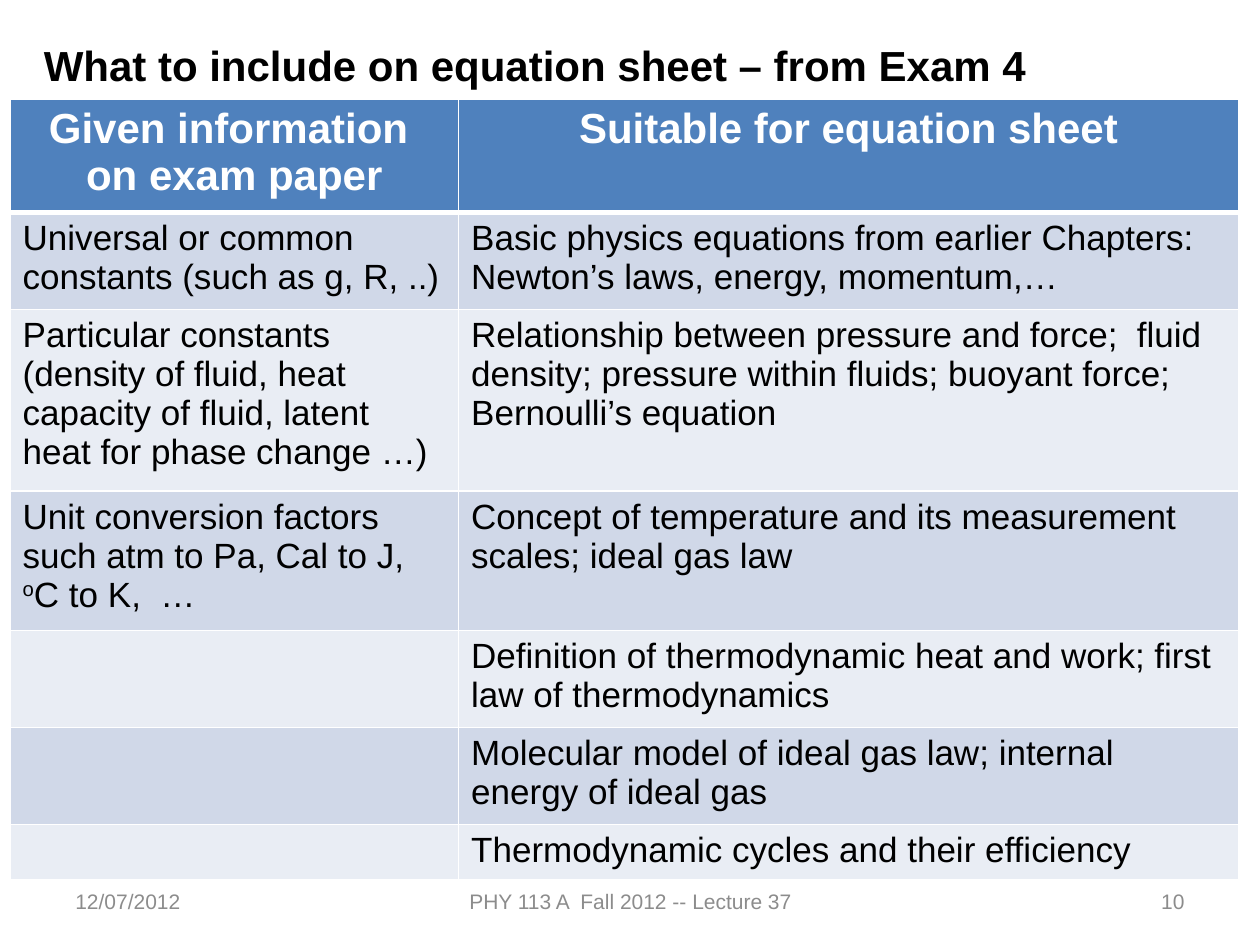
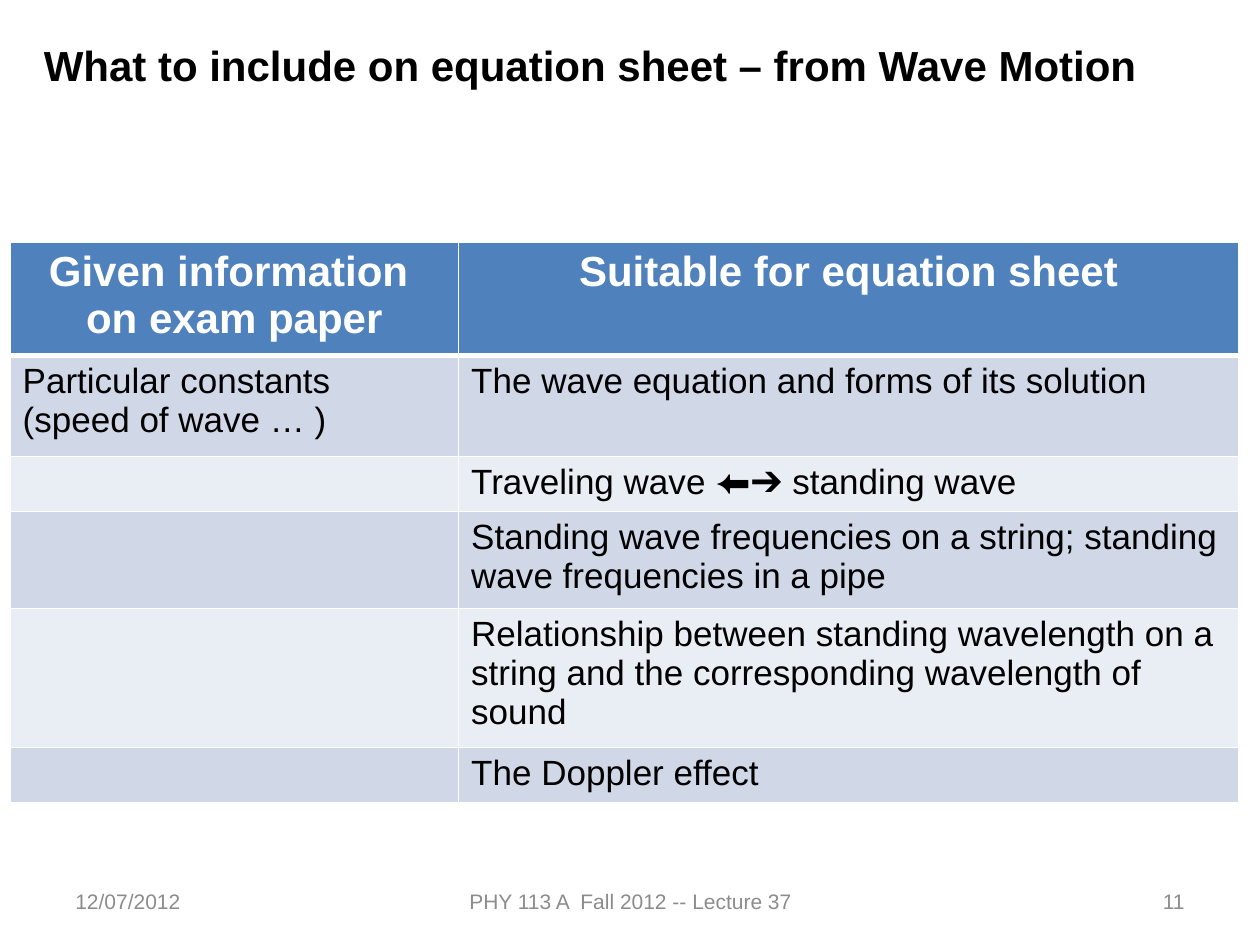
import dataclasses
import typing

import lxml.etree
import pptx
import pptx.dml.color
import pptx.enum.text
import pptx.oxml.ns
import pptx.util

RGB = pptx.dml.color.RGBColor
ALIGN = pptx.enum.text.PP_ALIGN
ANCHOR = pptx.enum.text.MSO_ANCHOR

WHITE = RGB(0xFF, 0xFF, 0xFF)
BLACK = RGB(0, 0, 0)
GREY = RGB(0x8C, 0x8C, 0x8C)
BLUE = RGB(0x4F, 0x81, 0xBD)
BANDS = (RGB(0xD0, 0xD8, 0xE8), RGB(0xE9, 0xED, 0xF4))

WIDE = pptx.util.Inches(10)
HIGH = pptx.util.Inches(7.5)

# Lengths below are percentages of the slide's width or height.
COLS = (35.6, 61.9)
LEFT = 0.8
HEAD_ROW = 11.9
LINE_ROW = 4.47
ROW_PAD = 1.33
FOOT_TOP, FOOT_HIGH = 92.7, 5.3
HEADS = ("Given information \non exam paper", "Suitable for equation sheet")


@dataclasses.dataclass(frozen=True)
class Style:
    size: int
    color: RGB
    bold: bool = False
    align: ALIGN = ALIGN.LEFT


@dataclasses.dataclass(frozen=True)
class Box:
    left: float
    top: float
    width: float
    height: float


@dataclasses.dataclass(frozen=True)
class Row:
    given: str
    sheet: str
    lines: float


@dataclasses.dataclass(frozen=True)
class Page:
    title: str
    number: int
    top: float
    rows: tuple[Row, ...]


@dataclasses.dataclass(frozen=True)
class Foot:
    text: str
    left: float
    width: float
    align: ALIGN


TITLE = Style(24, BLACK, True)
HEAD = Style(24, WHITE, True, ALIGN.CENTER)
BODY = Style(20, BLACK)

PAGES = (
    Page("What to include on equation sheet – from Exam 4", 10, 10.5, (
        Row("Universal or common constants (such as g, R, ..)",
            "Basic physics equations from earlier Chapters: "
            "Newton’s laws, energy, momentum,…", 2),
        Row("Particular constants (density of fluid, heat capacity of fluid, "
            "latent heat for phase change …)",
            "Relationship between pressure and force;  fluid density; "
            "pressure within fluids; buoyant force;  Bernoulli’s equation", 4),
        Row("Unit conversion factors such atm to Pa, Cal to J,\n^o^C to K,  …",
            "Concept of temperature and its measurement scales; "
            "ideal gas law", 3),
        Row("", "Definition of thermodynamic heat and work; "
            "first law of thermodynamics", 2),
        Row("", "Molecular model of ideal gas law; "
            "internal energy of ideal gas", 2),
        Row("", "Thermodynamic cycles and their efficiency", 1),
    )),
    Page("What to include on equation sheet – from Wave Motion", 11, 25.6, (
        Row("Particular constants (speed of wave … )",
            "The wave equation and forms of its solution", 2.1),
        Row("", "Traveling wave ⬅➔ standing wave", 1),
        Row("", "Standing wave frequencies on a string; "
            "standing wave frequencies in a pipe", 2),
        Row("", "Relationship between standing wavelength on a string "
            "and the corresponding wavelength of sound", 3),
        Row("", "The Doppler effect", 1),
    )),
)


def across(share: float) -> int:
    return round(WIDE * share / 100)


def down(share: float) -> int:
    return round(HIGH * share / 100)


def write(frame: typing.Any, text: str, style: Style) -> None:
    """Fill a frame; text between carets is raised."""
    frame.text = text
    for para in frame.paragraphs:
        para.alignment = style.align
        parts = para.text.split("^")
        if len(parts) > 1:
            para.text = ""
            for spot, part in enumerate(parts):
                if part:
                    run = para.add_run()
                    run.text = part
                    if spot % 2:
                        run._r.get_or_add_rPr().set("baseline", "30000")
        for run in para.runs:
            run.font.name = "Arial"
            run.font.size = pptx.util.Pt(style.size)
            run.font.bold = style.bold
            run.font.color.rgb = style.color


def label(slide: typing.Any, box: Box, text: str, style: Style,
          anchor: ANCHOR = ANCHOR.TOP) -> None:
    shape = slide.shapes.add_textbox(
        across(box.left), down(box.top), across(box.width), down(box.height))
    shape.text_frame.word_wrap = True
    shape.text_frame.vertical_anchor = anchor
    write(shape.text_frame, text, style)


def edge(cell: typing.Any, base: float) -> None:
    """Rule a cell in white, with its own width at the base."""
    props = cell._tc.get_or_add_tcPr()
    name = pptx.oxml.ns.qn
    for side, width in (("L", 1), ("R", 1), ("T", 1), ("B", base)):
        line = lxml.etree.SubElement(props, name(f"a:ln{side}"),
                                     w=str(pptx.util.Pt(width)))
        fill = lxml.etree.SubElement(line, name("a:solidFill"))
        lxml.etree.SubElement(fill, name("a:srgbClr"), val=str(WHITE))


def draw_row(table: typing.Any, place: int, texts: tuple[str, ...],
             style: Style, fill: RGB, base: float) -> None:
    for col, text in enumerate(texts):
        cell = table.cell(place, col)
        edge(cell, base)
        cell.fill.solid()
        cell.fill.fore_color.rgb = fill
        write(cell.text_frame, text, style)


def draw_table(slide: typing.Any, page: Page) -> None:
    highs = [HEAD_ROW] + [ROW_PAD + LINE_ROW * row.lines for row in page.rows]
    table = slide.shapes.add_table(
        len(highs), len(COLS), across(LEFT), down(page.top),
        across(sum(COLS)), down(sum(highs))).table
    for col, width in zip(table.columns, COLS):
        col.width = across(width)
    for row, high in zip(table.rows, highs):
        row.height = down(high)
    draw_row(table, 0, HEADS, HEAD, BLUE, 3)
    for place, row in enumerate(page.rows, 1):
        draw_row(table, place, (row.given, row.sheet), BODY,
                 BANDS[(place - 1) % 2], 1)


def draw_feet(slide: typing.Any, number: int) -> None:
    feet = (
        Foot("12/07/2012", 5, 23.3, ALIGN.LEFT),
        Foot("PHY 113 A  Fall 2012 -- Lecture 37", 34.2, 31.7, ALIGN.CENTER),
        Foot(str(number), 71.7, 23.3, ALIGN.RIGHT),
    )
    for foot in feet:
        label(slide, Box(foot.left, FOOT_TOP, foot.width, FOOT_HIGH),
              foot.text, Style(12, GREY, align=foot.align), ANCHOR.MIDDLE)


def main() -> None:
    deck = pptx.Presentation()
    deck.slide_width, deck.slide_height = WIDE, HIGH
    for page in PAGES:
        slide = deck.slides.add_slide(deck.slide_layouts[6])
        draw_feet(slide, page.number)
        label(slide, Box(2.5, 3.5, 95, 6.7), page.title, TITLE)
        draw_table(slide, page)
    deck.save("out.pptx")


if __name__ == "__main__":
    main()
